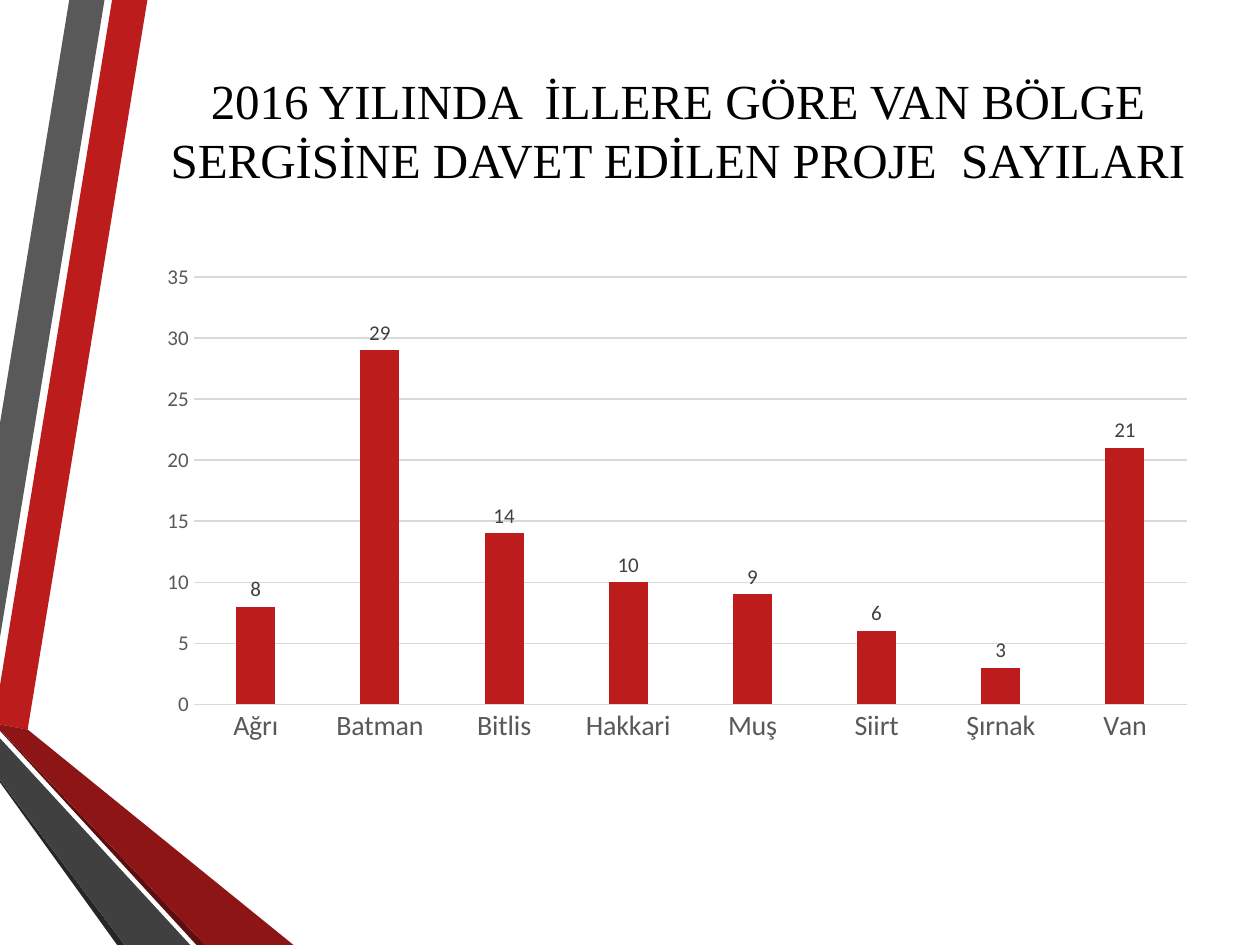
from pptx import Presentation
from pptx.chart.data import CategoryChartData
from pptx.dml.color import RGBColor
from pptx.enum.chart import XL_CHART_TYPE, XL_LABEL_POSITION, XL_TICK_MARK
from pptx.enum.text import MSO_ANCHOR, PP_ALIGN
from pptx.util import Pt

PX = 9144  # EMU per px, 100 px to the inch
RED, GREY, GRID = "BC1C1C", "595959", "D9D9D9"

BANDS = [
    (RED, [(0, 544), (0, 575), (22, 579), (117, 0), (89, 0)]),
    (GREY, [(83, 0), (55, 0), (0, 336), (0, 506)]),
    ("262626", [(0, 619), (0, 621), (93, 750), (99, 750)]),
    ("5E0E0E", [(0, 579), (0, 580), (156, 750), (163, 750)]),
    ("8D1515", [(0, 579), (163, 750), (233, 750), (22, 579), (0, 575)]),
    ("404040", [(0, 619), (99, 750), (151, 750), (0, 586)]),
]
COUNTS = {"Ağrı": 8, "Batman": 29, "Bitlis": 14, "Hakkari": 10,
          "Muş": 9, "Siirt": 6, "Şırnak": 3, "Van": 21}
TITLE = ("2016 YILINDA  İLLERE GÖRE VAN BÖLGE "
         "SERGİSİNE DAVET EDİLEN PROJE  SAYILARI")


def color(code):
    return RGBColor.from_string(code)


def apply(item, **values):
    for name, value in values.items():
        setattr(item, name, value)


def style(font, size, code, name="Calibri"):
    apply(font, size=Pt(size), name=name)
    font.color.rgb = color(code)


def stroke(line, code):
    line.width = Pt(0.75)
    line.color.rgb = color(code)


class Deck:
    """Holds the presentation, its current slide and the text style."""

    def __init__(self, width, height):
        self.file = Presentation()
        apply(self.file, slide_width=width * PX, slide_height=height * PX)
        self.slide = self.file.slides.add_slide(self.file.slide_layouts[6])
        self.face = "Times New Roman"

    def band(self, code, points):
        pen = self.slide.shapes.build_freeform(*points[0], scale=PX)
        pen.add_line_segments(points[1:], close=True)
        shape = pen.convert_to_shape()
        shape.shadow.inherit = False
        shape.fill.solid()
        shape.fill.fore_color.rgb = color(code)
        shape.line.fill.background()

    def title(self, box, text):
        frame = self.slide.shapes.add_textbox(*(n * PX for n in box)).text_frame
        apply(frame, word_wrap=True, vertical_anchor=MSO_ANCHOR.MIDDLE)
        para = frame.paragraphs[0]
        para.alignment = PP_ALIGN.CENTER
        run = para.add_run()
        run.text = text
        style(run.font, 28, "000000", self.face)

    def columns(self, box, counts):
        data = CategoryChartData(number_format="#,##0")
        data.categories = list(counts)
        data.add_series("Series 1", list(counts.values()))
        chart = self.slide.shapes.add_chart(
            XL_CHART_TYPE.COLUMN_CLUSTERED, *(n * PX for n in box), data).chart
        apply(chart, has_legend=False, has_title=False)
        style(chart.font, 10, "000000")

        plot = chart.plots[0]
        apply(plot, gap_width=219, overlap=-27, vary_by_categories=False)
        bars = plot.series[0]
        bars.format.fill.solid()
        bars.format.fill.fore_color.rgb = color(RED)
        labels = bars.data_labels
        apply(labels, show_value=True, position=XL_LABEL_POSITION.OUTSIDE_END,
              number_format="#,##0", number_format_is_linked=False)
        style(labels.font, 12, "404040")

        names, values = chart.category_axis, chart.value_axis
        for axis, size in ((names, 16), (values, 12)):
            apply(axis, major_tick_mark=XL_TICK_MARK.NONE,
                  minor_tick_mark=XL_TICK_MARK.NONE)
            style(axis.tick_labels.font, size, GREY)
        stroke(names.format.line, GRID)
        apply(values, has_major_gridlines=True, minimum_scale=0,
              maximum_scale=35, major_unit=5)
        stroke(values.major_gridlines.format.line, GRID)
        values.format.line.fill.background()


def main():
    deck = Deck(1000, 750)
    for code, points in BANDS:
        deck.band(code, points)
    deck.title((88, 36, 900, 133), TITLE)
    deck.columns((116, 202, 843, 396), COUNTS)
    deck.file.save("out.pptx")


if __name__ == "__main__":
    main()
